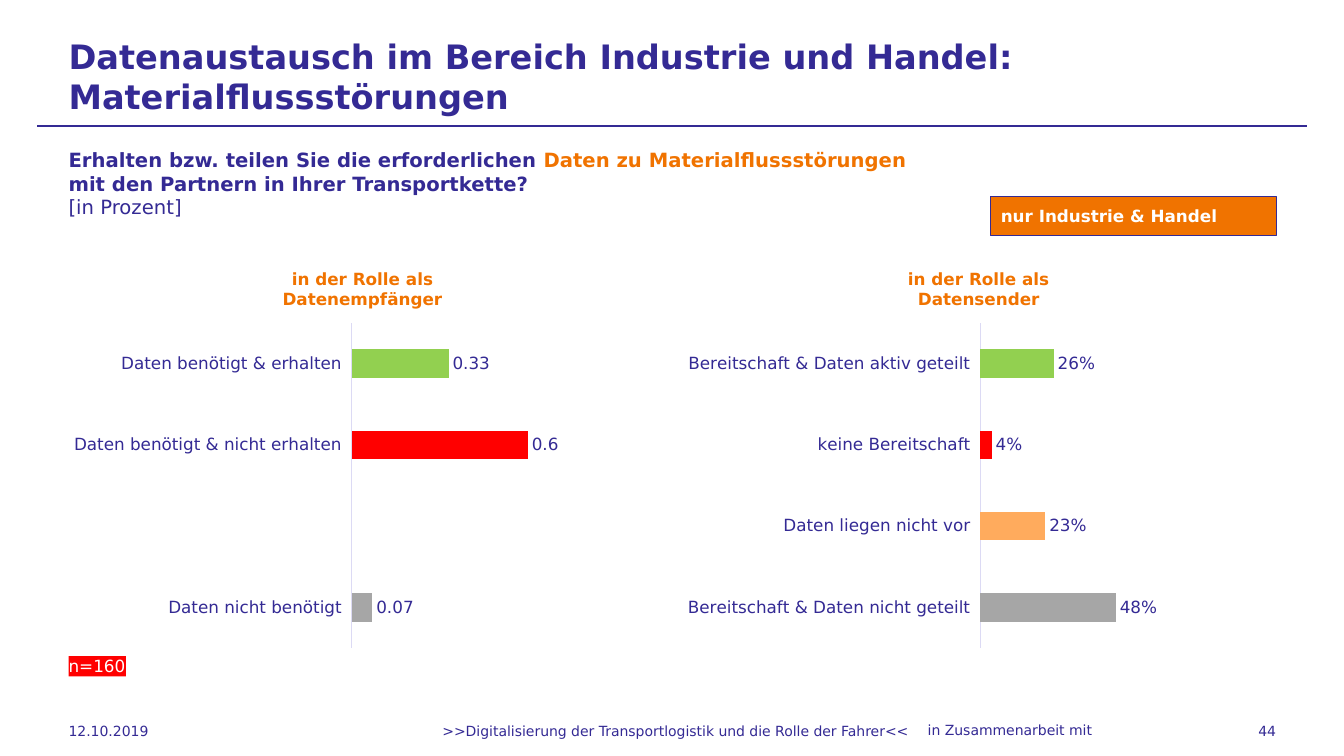
from lxml.etree import SubElement
from pptx import Presentation
from pptx.chart.data import CategoryChartData
from pptx.dml.color import RGBColor
from pptx.enum.chart import XL_CHART_TYPE as ChartType, XL_LABEL_POSITION as LabelPos
from pptx.enum.chart import XL_TICK_LABEL_POSITION as TickLabels, XL_TICK_MARK as Tick
from pptx.enum.shapes import MSO_CONNECTOR as Connector, MSO_SHAPE as Shape
from pptx.enum.text import MSO_ANCHOR as Anchor, PP_ALIGN as Align
from pptx.oxml import parse_xml
from pptx.oxml.ns import nsdecls, qn
from pptx.util import Pt

FONT = "DejaVu Sans"
INDIGO = RGBColor(0x34, 0x2A, 0x94)
LILAC = RGBColor(0xDC, 0xDA, 0xF4)
ORANGE = RGBColor(0xF0, 0x73, 0x00)
APRICOT = RGBColor(0xFF, 0xAB, 0x5D)
GREEN = RGBColor(0x92, 0xD0, 0x50)
RED = RGBColor(0xFF, 0x00, 0x00)
GREY = RGBColor(0xA6, 0xA6, 0xA6)
WHITE = RGBColor(0xFF, 0xFF, 0xFF)

LEFT, RIGHT = 49, 911.5
FOOTER_TOP, FOOTER_HEIGHT = 507.6, 28.8
CHART_TOP, CHART_HEIGHT = 179.3, 289.4

# Lines of runs: (text, bold, colour)
TITLE = [[("Datenaustausch im Bereich Industrie und Handel:", True, INDIGO)],
         [("Materialflussstörungen", True, INDIGO)]]
QUESTION = [[("Erhalten bzw. teilen Sie die erforderlichen ", True, INDIGO),
             ("Daten zu Materialflussstörungen", True, ORANGE)],
            [("mit den Partnern in Ihrer Transportkette?", True, INDIGO)],
            [("[in Prozent]", False, INDIGO)]]

# Bars from bottom to top: (category, value, colour)
CHARTS = [
    dict(left=487.4, width=423.4, plot_x=0.503, plot_w=0.476, fmt="0%",
         title=["in der Rolle als", "Datensender"],
         bars=[("Bereitschaft & Daten nicht geteilt", 0.48, GREY),
               ("Daten liegen nicht vor", 0.23, APRICOT),
               ("keine Bereitschaft", 0.04, RED),
               ("Bereitschaft & Daten aktiv geteilt", 0.26, GREEN)]),
    dict(left=LEFT, width=419.8, plot_x=0.482, plot_w=0.499, fmt="General",
         title=["in der Rolle als", "Datenempfänger"],
         bars=[("Daten nicht benötigt", 0.07, GREY),
               ("", None, None),
               ("Daten benötigt & nicht erhalten", 0.6, RED),
               ("Daten benötigt & erhalten", 0.33, GREEN)]),
]

# Footer: (text, left, top, width, alignment)
FOOTER = [
    ("in Zusammenarbeit mit", 612, FOOTER_TOP - 0.8, 168, Align.RIGHT),
    (">>Digitalisierung der Transportlogistik und die Rolle der Fahrer<<",
     173.5, FOOTER_TOP, 617.8, Align.CENTER),
    ("12.10.2019", LEFT, FOOTER_TOP, 113, Align.LEFT),
    ("44", RIGHT - 108, FOOTER_TOP, 108, Align.RIGHT),
]


def set_font(font, size, color, bold=False):
    font.name, font.size, font.bold = FONT, Pt(size), bold
    font.color.rgb = color


def write(sp, lines, size, align=Align.LEFT, anchor=Anchor.TOP, inset=0, wrap=True):
    """Fill a shape with one paragraph whose lines are split by line breaks."""
    tf = sp.text_frame
    tf.word_wrap, tf.vertical_anchor = wrap, anchor
    tf.margin_left = tf.margin_right = Pt(inset)
    tf.margin_top = tf.margin_bottom = 0
    p = tf.paragraphs[0]
    p.alignment = align
    for i, line in enumerate(lines):
        if i:
            p.add_line_break()
        for text, bold, color in line:
            r = p.add_run()
            r.text = text
            set_font(r.font, size, color, bold)


def add_text(s, box, lines, size, **options):
    write(s.shapes.add_textbox(*map(Pt, box)), lines, size, **options)


def add_box(s, box, fill, outline=None):
    sp = s.shapes.add_shape(Shape.RECTANGLE, *map(Pt, box))
    sp.shadow.inherit = False
    sp.fill.solid()
    sp.fill.fore_color.rgb = fill
    if outline:
        sp.line.color.rgb, sp.line.width = outline, Pt(0.75)
    else:
        sp.line.fill.background()
    return sp


def place_plot(chart, x, y, w, h):
    """Fix the inner plot area as fractions of the chart."""
    area = chart._chartSpace.chart.plotArea
    for old in area.findall(qn("c:layout")):
        area.remove(old)
    values = [("layoutTarget", "inner"), ("xMode", "edge"), ("yMode", "edge"),
              ("x", x), ("y", y), ("w", w), ("h", h)]
    inner = "".join(f'<c:{tag} val="{val}"/>' for tag, val in values)
    area.insert(0, parse_xml(f'<c:layout {nsdecls("c")}><c:manualLayout>{inner}'
                             '</c:manualLayout></c:layout>'))


def add_bars(s, left, width, plot_x, plot_w, fmt, title, bars):
    names, values, colors = zip(*bars)
    data = CategoryChartData(number_format=fmt)
    data.categories = names
    data.add_series("Anteil", values)
    chart = s.shapes.add_chart(ChartType.BAR_CLUSTERED, Pt(left), Pt(CHART_TOP),
                               Pt(width), Pt(CHART_HEIGHT), data).chart
    set_font(chart.font, 10, INDIGO)
    chart.has_legend = False
    tf = chart.chart_title.text_frame
    for i, line in enumerate(title):
        p = tf.add_paragraph() if i else tf.paragraphs[0]
        r = p.add_run()
        r.text = line
        set_font(r.font, 12, ORANGE, True)

    axis = chart.category_axis
    axis.major_tick_mark = axis.minor_tick_mark = Tick.NONE
    axis.tick_label_position = TickLabels.LOW
    axis.format.line.color.rgb, axis.format.line.width = LILAC, Pt(0.75)
    set_font(axis.tick_labels.font, 12, INDIGO)
    axis = chart.value_axis
    axis.minimum_scale, axis.maximum_scale = 0, 1
    axis.has_major_gridlines = axis.visible = False

    plot = chart.plots[0]
    plot.gap_width, plot.vary_by_categories = 182, False
    plot.has_data_labels = True
    labels = plot.data_labels
    labels.show_value, labels.position = True, LabelPos.OUTSIDE_END
    labels.number_format, labels.number_format_is_linked = fmt, False
    set_font(labels.font, 12, INDIGO)
    for i, color in enumerate(colors):
        if color:
            fill = plot.series[0].points[i].format.fill
            fill.solid()
            fill.fore_color.rgb = color
    place_plot(chart, plot_x, 0.178, plot_w, 0.802)


def main():
    prs = Presentation()
    prs.slide_width, prs.slide_height = Pt(960), Pt(540)
    s = prs.slides.add_slide(prs.slide_layouts[6])

    rule = s.shapes.add_connector(Connector.STRAIGHT, Pt(26.6), Pt(90), Pt(933.8), Pt(90))
    rule.line.color.rgb, rule.line.width = INDIGO, Pt(0.75)
    SubElement(rule._element.spPr, qn("a:effectLst"))

    add_text(s, (LEFT, 43.2, 680.4, 22.3), TITLE, 24, anchor=Anchor.MIDDLE)
    add_text(s, (LEFT, 105.8, 727.2, 51.1), QUESTION, 14)
    for chart in CHARTS:
        add_bars(s, **chart)

    badge = add_box(s, (707.8, 140.4, 203.8, 28.1), ORANGE, INDIGO)
    write(badge, [[("nur Industrie & Handel", True, WHITE)]], 12,
          anchor=Anchor.MIDDLE, inset=7.2)
    sample = add_box(s, (LEFT, 468.7, 41, 14.4), RED)
    write(sample, [[("n=160", False, WHITE)]], 12, wrap=False)

    for text, left, top, width, align in FOOTER:
        add_text(s, (left, top, width, FOOTER_HEIGHT), [[(text, False, INDIGO)]], 10,
                 align=align, anchor=Anchor.MIDDLE)
    prs.save("out.pptx")


if __name__ == "__main__":
    main()
